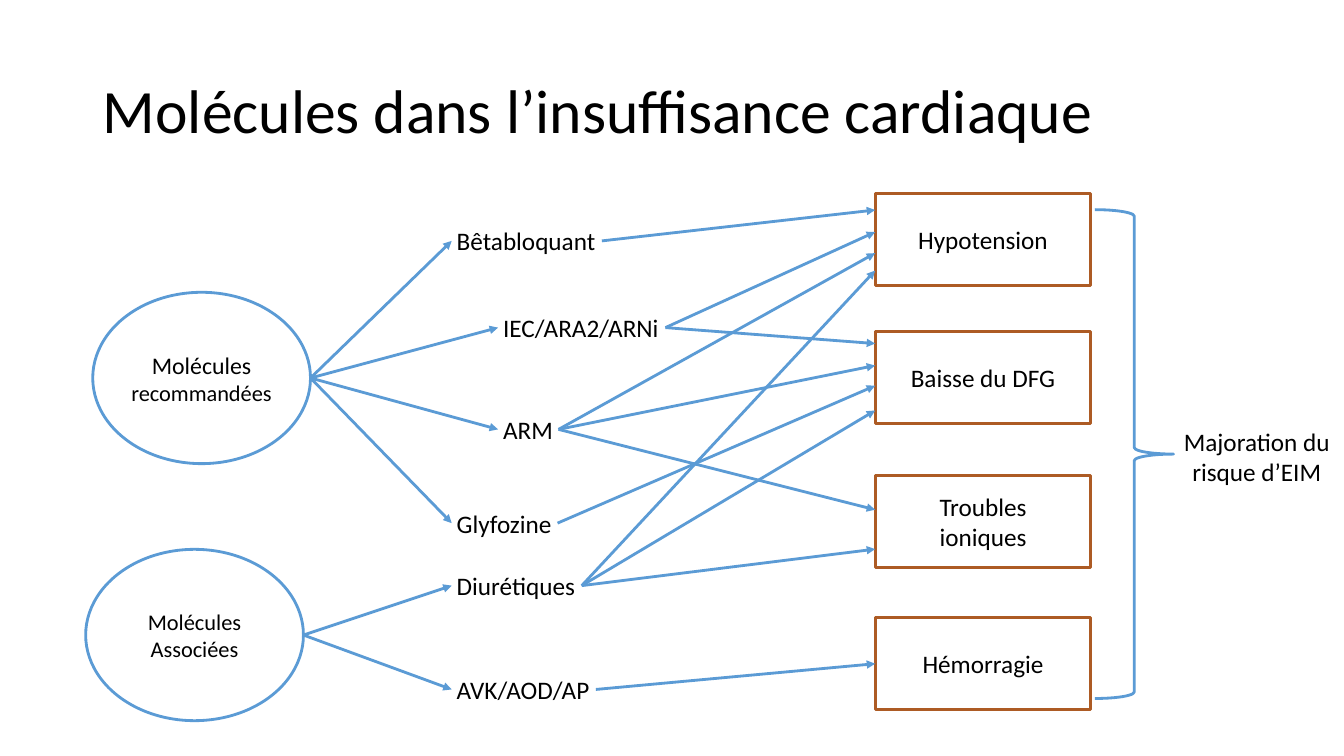
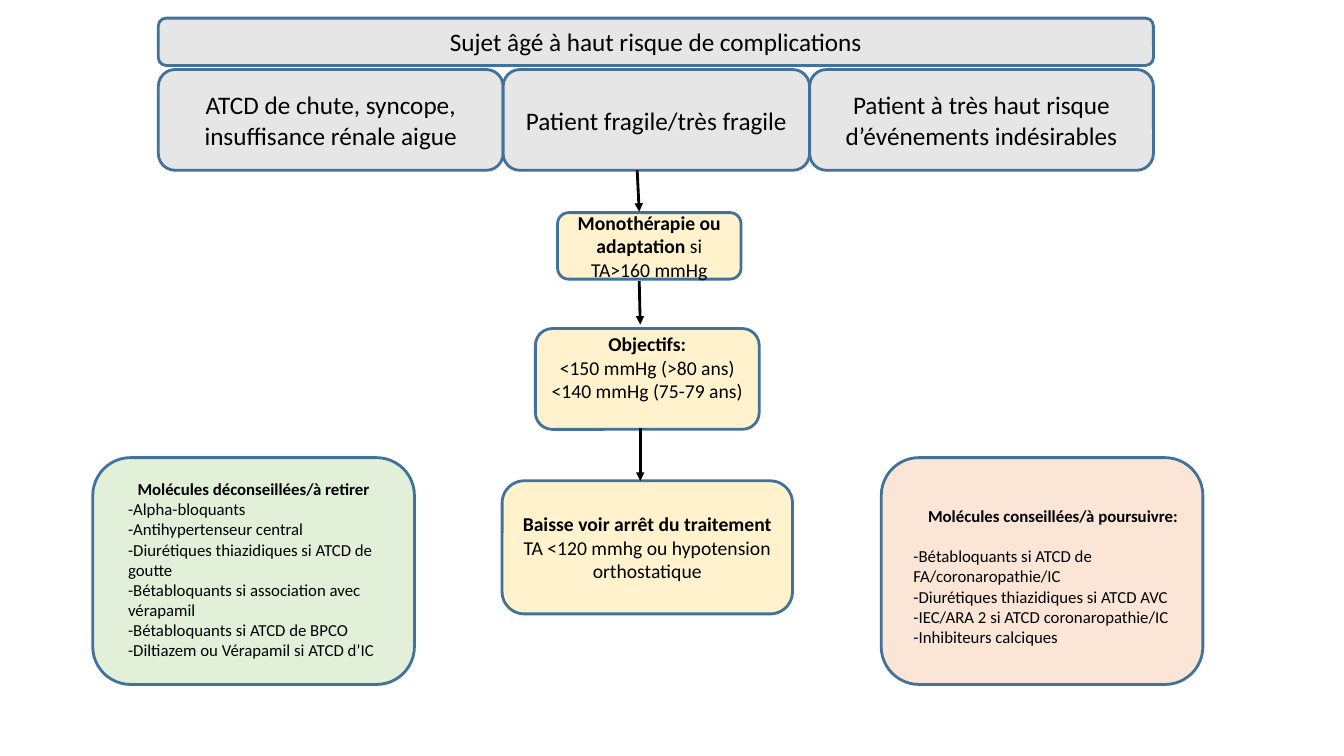
from lxml.etree import SubElement
from pptx import Presentation
from pptx.dml.color import RGBColor
from pptx.enum.shapes import MSO_CONNECTOR, MSO_SHAPE
from pptx.enum.text import MSO_ANCHOR, MSO_AUTO_SIZE, PP_ALIGN
from pptx.oxml.ns import qn
from pptx.util import Inches, Pt

FONT = "Calibri"
COLORS = {
    "text": "000000", "white": "FFFFFF", "blue": "5B9BD5", "rust": "AD5B24",
    "navy": "42719B", "grey": "E7E6E6", "yellow": "FFF2CC",
    "green": "E2F0D9", "salmon": "FBE5D6",
}

# Slide 1: a paragraph is a string or a list of runs (text, bold)
HEART_TITLE = "Molécules dans l’insuffisance cardiaque"
EFFECT_LEFT, EFFECT_WIDTH, EFFECT_HEIGHT = 8.68, 2.14, 0.91
EFFECT_TOPS = {
    "Hypotension": 1.92, "Baisse du DFG": 3.29,
    "Troubles ioniques": 4.72, "Hémorragie": 6.13,
}
# Drug: left, top, width, then effects with the share of the box height reached
FAMILIES = [
    ((0.92, 2.9, 2.16, 1.7), [[("Molécules ", False), ("recommandées", False)]], [
        ("Bêtabloquant", 4.48, 2.19, 1.49, [("Hypotension", 0.18)]),
        ("IEC/ARA2/ARNi", 4.94, 3.05, 1.66,
         [("Hypotension", 0.42), ("Baisse du DFG", 0.13)]),
        ("ARM", 4.94, 4.06, 0.6,
         [("Hypotension", 0.65), ("Baisse du DFG", 0.37), ("Troubles ioniques", 0.37)]),
        ("Glyfozine", 4.48, 4.99, 1.05, [("Baisse du DFG", 0.59)]),
    ]),
    ((0.85, 5.45, 2.16, 1.7), ["Molécules", "Associées"], [
        ("Diurétiques", 4.48, 5.61, 1.29,
         [("Hypotension", 0.84), ("Baisse du DFG", 0.86), ("Troubles ioniques", 0.8)]),
        ("AVK/AOD/AP", 4.48, 6.64, 1.43, [("Hémorragie", 0.5)]),
    ]),
]
OUTCOME = "Majoration du risque d’EIM"

# Slide 2
RISK_TITLE = "Sujet âgé à haut risque de complications"
PROFILES = [
    ("ATCD de chute, syncope, insuffisance rénale aigue", 3.42),
    ("Patient fragile/très fragile", 3.04),
    ("Patient à très haut risque d’événements indésirables", 3.41),
]
STEPS = [
    ((5.53, 2.11, 1.82, 0.66),
     [[("Monothérapie ou adaptation", True), (" si TA>160 mmHg", False)]], 0.05),
    ((5.31, 3.26, 2.22, 1),
     [[("Objectifs:", True)], "<150 mmHg (>80 ans)", "<140 mmHg (75-79 ans)"], 0.28),
    ((4.98, 4.77, 2.88, 1.32),
     [[("Baisse voir arrêt du traitement", True),
       (" TA <120 mmhg ou hypotension orthostatique", False)]], 0.05),
]
STEP_ARROWS = [
    ((6.32, 1.69), (6.34, 2.1)),
    ((6.34, 2.79), (6.35, 3.22)),
    ((6.35, 4.25), (6.35, 4.77)),
]
DRUG_LISTS = [
    ("green", 0.92, (1.22, 4.69, 2.59, 1.92), 0, "Molécules déconseillées/à retirer", [
        "-Alpha-bloquants",
        "-Antihypertenseur central",
        "-Diurétiques thiazidiques si ATCD de goutte",
        "-Bétabloquants si association avec vérapamil",
        "-Bétabloquants si ATCD de BPCO",
        "-Diltiazem ou Vérapamil si ATCD d’IC",
    ]),
    ("salmon", 8.74, (9.01, 4.69, 2.87, 2.05), 14.6, "Molécules conseillées/à poursuivre:", [
        "-Bétabloquants si ATCD de FA/coronaropathie/IC",
        "-Diurétiques thiazidiques si ATCD AVC",
        "-IEC/ARA 2 si ATCD coronaropathie/IC",
        "-Inhibiteurs calciques",
    ]),
]


def rgb(name):
    return RGBColor.from_string(COLORS[name])


def inches(values):
    return [Inches(value) for value in values]


def write(shape, paragraphs, size, align=PP_ALIGN.CENTER, inset=(0.05, 0.05, 0.05, 0.05)):
    """Fill a shape with paragraphs; inset is left, top, right, bottom."""
    frame = shape.text_frame
    frame.word_wrap = True
    frame.auto_size = MSO_AUTO_SIZE.NONE
    frame.vertical_anchor = MSO_ANCHOR.MIDDLE
    (frame.margin_left, frame.margin_top,
     frame.margin_right, frame.margin_bottom) = inches(inset)
    for index, content in enumerate(paragraphs):
        paragraph = frame.add_paragraph() if index else frame.paragraphs[0]
        paragraph.alignment = align
        paragraph.space_before = Pt(0)
        paragraph.font.name, paragraph.font.size = FONT, Pt(size)
        paragraph.font.color.rgb = rgb("text")
        for text, bold in [(content, False)] if isinstance(content, str) else content:
            run = paragraph.add_run()
            run.text, run.font.bold = text, bold
    return frame


def place(shape, box):
    shape.left, shape.top, shape.width, shape.height = inches(box)


def add_box(slide, kind, box, line, fill=None):
    shape = slide.shapes.add_shape(kind, *inches(box))
    shape.shadow.inherit = False
    if fill:
        shape.fill.solid()
        shape.fill.fore_color.rgb = rgb(fill)
    else:
        shape.fill.background()
    shape.line.color.rgb = rgb(line)
    shape.line.width = Pt(2)
    return shape


def add_arrow(slide, start, end, color):
    arrow = slide.shapes.add_connector(MSO_CONNECTOR.STRAIGHT, *inches(start + end))
    arrow.line.color.rgb = rgb(color)
    arrow.line.width = Pt(2)
    SubElement(arrow.line._get_or_add_ln(), qn("a:tailEnd"), type="triangle")
    SubElement(arrow._element.spPr, qn("a:effectLst"))
    return arrow


def bring_to_front(slide, shape):
    slide.shapes._spTree.append(shape._element)


def add_drug(slide, name, left, top, width):
    label = slide.shapes.add_textbox(*inches((left, top, width, 0.4)))
    frame = write(label, [name], 18, PP_ALIGN.LEFT)
    frame.word_wrap = False
    frame.auto_size = MSO_AUTO_SIZE.SHAPE_TO_FIT_TEXT
    return label


def build_heart_failure(deck):
    slide = deck.slides.add_slide(deck.slide_layouts[5])
    place(slide.shapes.title, (0.92, 0.4, 11.5, 1.45))
    title = write(slide.shapes.title, [HEART_TITLE], 44, PP_ALIGN.LEFT, (0.1, 0.05, 0.1, 0.05))
    title.paragraphs[0].line_spacing = 0.9

    effects = {}
    for name, top in EFFECT_TOPS.items():
        box = (EFFECT_LEFT, top, EFFECT_WIDTH, EFFECT_HEIGHT)
        effects[name] = add_box(slide, MSO_SHAPE.RECTANGLE, box, "rust")
        write(effects[name], [name], 18, inset=(0.28, 0.05, 0.28, 0.05))

    for box, family, drugs in FAMILIES:
        oval = add_box(slide, MSO_SHAPE.OVAL, box, "blue", "white")
        runs = write(oval, family, 16).paragraphs[0].runs
        if len(runs) > 1:
            runs[0].font.size = Pt(17)
        origin = (box[0] + box[2], box[1] + box[3] / 2)
        for name, left, top, width, reached in drugs:
            label = add_drug(slide, name, left, top, width)
            middle = top + 0.2
            add_arrow(slide, origin, (left, middle), "blue").end_connect(label, 1)
            for effect, share in reached:
                target = (EFFECT_LEFT, EFFECT_TOPS[effect] + share * EFFECT_HEIGHT)
                arrow = add_arrow(slide, (left + width, middle), target, "blue")
                arrow.begin_connect(label, 3)
                if share == 0.5:
                    arrow.end_connect(effects[effect], 1)

    add_box(slide, MSO_SHAPE.RIGHT_BRACE, (10.86, 2.08, 0.78, 4.85), "blue")
    outcome = slide.shapes.add_textbox(*inches((11.66, 4.17, 1.61, 0.71)))
    write(outcome, [OUTCOME], 18)


def build_elderly_patient(deck):
    slide = deck.slides.add_slide(deck.slide_layouts[3])
    title, *lists = slide.placeholders
    rounded = MSO_SHAPE.ROUNDED_RECTANGLE

    add_box(slide, rounded, (1.57, 0.18, 9.87, 0.47), "navy", "grey")
    place(title, (1.65, 0.21, 9.71, 0.4))
    write(title, [RISK_TITLE], 18)
    bring_to_front(slide, title)

    left = 1.57
    for profile, width in PROFILES:
        write(add_box(slide, rounded, (left, 0.69, width, 1), "navy", "grey"), [profile], 18)
        left += width

    for box, paragraphs, bottom in STEPS:
        step = add_box(slide, rounded, box, "navy", "yellow")
        write(step, paragraphs, 14, inset=(0.05, 0.05, 0.05, bottom))
    for start, end in STEP_ARROWS:
        add_arrow(slide, start, end, "text")

    for body, (fill, left, box, gap, heading, drugs) in zip(lists, DRUG_LISTS):
        add_box(slide, rounded, (left, 4.54, 3.19, 2.25), "navy", fill)
        place(body, box)
        frame = write(body, [[(heading, True)]] + drugs, 12, PP_ALIGN.LEFT)
        frame.paragraphs[0].alignment = PP_ALIGN.CENTER
        frame.paragraphs[0].space_after = Pt(gap)
        for paragraph in frame.paragraphs:
            properties = paragraph._p.get_or_add_pPr()
            properties.set("marL", "0")
            properties.set("indent", "0")
            bullet = SubElement(properties, qn("a:buNone"))
            properties.find(qn("a:defRPr")).addprevious(bullet)
        bring_to_front(slide, body)


def main():
    deck = Presentation()
    deck.slide_width, deck.slide_height = Inches(13.33), Inches(7.5)
    build_heart_failure(deck)
    build_elderly_patient(deck)
    deck.save("out.pptx")


if __name__ == "__main__":
    main()
